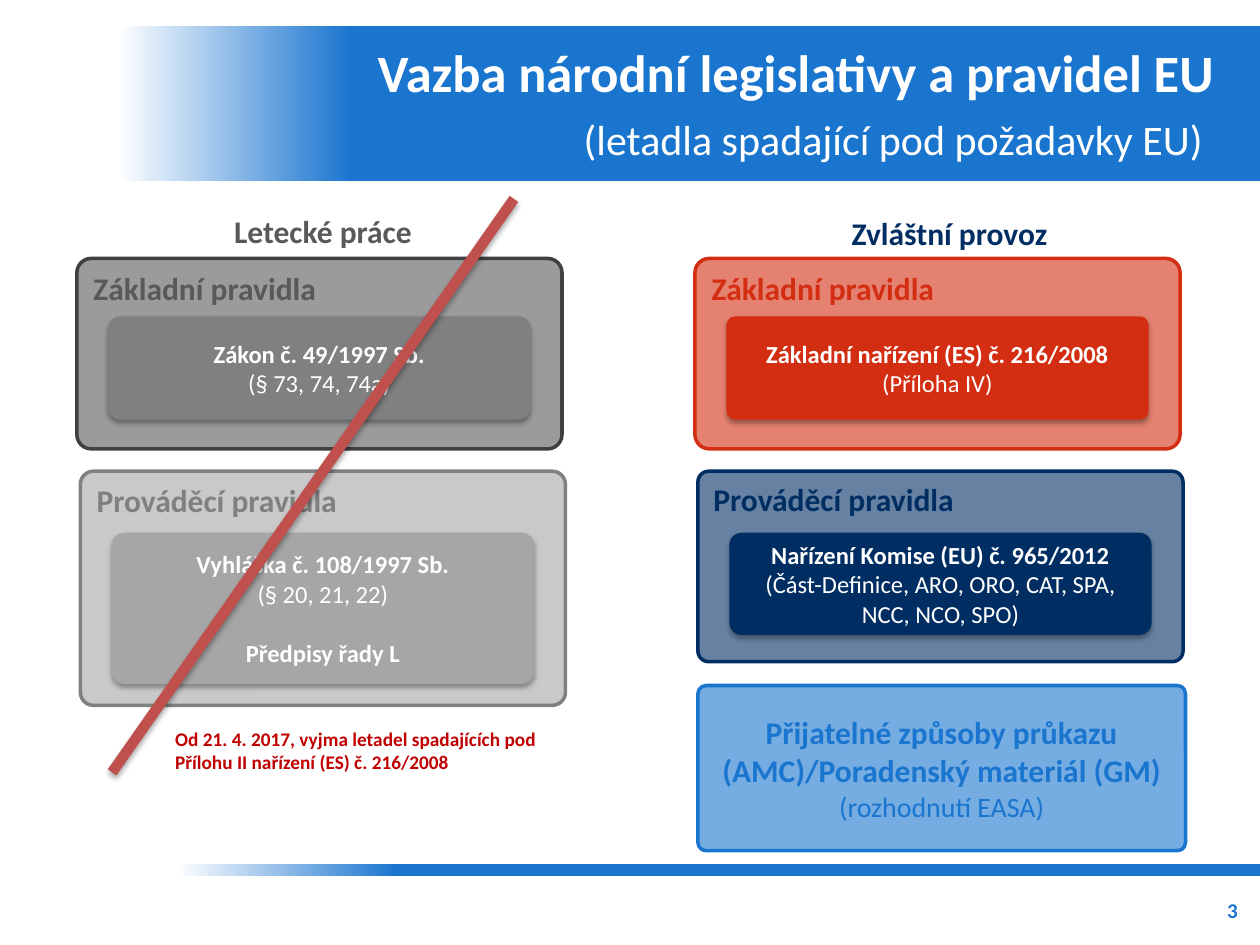
"""Build the slide comparing national aviation law with the EU rules."""
from dataclasses import dataclass
from typing import Optional

from lxml.etree import SubElement
from pptx import Presentation
from pptx.dml.color import RGBColor
from pptx.enum.shapes import MSO_CONNECTOR as Connector, MSO_SHAPE as Shape
from pptx.enum.text import MSO_ANCHOR as Anchor, MSO_AUTO_SIZE as AutoSize, PP_ALIGN as Align
from pptx.oxml.ns import qn
from pptx.util import Cm, Pt

WHITE = RGBColor(0xFF, 0xFF, 0xFF)
BLUE = RGBColor(0x1A, 0x75, 0xCF)
NAVY = RGBColor(0x00, 0x2E, 0x63)
RED = RGBColor(0xD4, 0x2E, 0x12)
NOTE_RED = RGBColor(0xC0, 0x00, 0x00)
STRIKE_RED = RGBColor(0xC0, 0x50, 0x4D)
CHARCOAL = RGBColor(0x40, 0x40, 0x40)
DARK_GRAY = RGBColor(0x59, 0x59, 0x59)
GRAY = RGBColor(0x80, 0x80, 0x80)
LIGHT_GRAY = RGBColor(0xA6, 0xA6, 0xA6)
FONT = "Calibri"
CARD_WIDTH = 8.51


@dataclass(frozen=True)
class Box:
    left: float
    top: float
    width: float
    height: float

    def lengths(self) -> tuple:
        return Cm(self.left), Cm(self.top), Cm(self.width), Cm(self.height)


@dataclass(frozen=True)
class Line:
    text: str
    size: float
    bold: bool = True
    space_before: float = 0


@dataclass(frozen=True)
class Panel:
    box: Box
    fill: RGBColor
    border: RGBColor
    text_color: RGBColor
    lines: tuple
    radius: float
    card: Optional["Card"] = None


@dataclass(frozen=True)
class Card:
    top: float
    height: float
    fill: RGBColor
    lines: tuple
    radius: float


@dataclass(frozen=True)
class Label:
    box: Box
    line: Line
    color: RGBColor
    wrap: bool = False
    align: Align = Align.LEFT
    anchor: Anchor = Anchor.TOP


PANELS = (
    Panel(Box(1.55, 5.21, 9.78, 3.84), DARK_GRAY, CHARCOAL, DARK_GRAY,
          (Line("Základní pravidla", 18),), 0.075,
          Card(6.38, 2.08, GRAY,
               (Line("Zákon č. 49/1997 Sb.", 14), Line("(§ 73, 74, 74a)", 14, False)), 0.118)),
    Panel(Box(1.62, 9.5, 9.78, 4.72), LIGHT_GRAY, GRAY, GRAY,
          (Line("Prováděcí pravidla", 18),), 0.056,
          Card(10.74, 3.05, LIGHT_GRAY,
               (Line("Vyhláška č. 108/1997 Sb.", 14), Line("(§ 20, 21, 22)", 14, False),
                Line("Předpisy řady L", 14, space_before=17)), 0.083)),
    Panel(Box(14.01, 5.21, 9.78, 3.84), RED, RED, RED,
          (Line("Základní pravidla", 18),), 0.075,
          Card(6.38, 2.08, RED,
               (Line("Základní nařízení (ES) č. 216/2008", 14),
                Line("(Příloha IV)", 14, False)), 0.081)),
    Panel(Box(14.07, 9.5, 9.78, 3.84), NAVY, NAVY, NAVY,
          (Line("Prováděcí pravidla", 18),), 0.056,
          Card(10.74, 2.06, NAVY,
               (Line("Nařízení Komise (EU) č. 965/2012", 14),
                Line("(Část-Definice, ARO, ORO, CAT, SPA, NCC, NCO, SPO)", 14, False)), 0.117)),
    Panel(Box(14.07, 13.82, 9.83, 3.33), BLUE, BLUE, BLUE,
          (Line("Přijatelné způsoby průkazu (AMC)/Poradenský materiál (GM)", 18),
           Line("(rozhodnutí EASA)", 16, False)), 0.049),
)
HEADINGS = (
    Label(Box(4.47, 4.14, 4.09, 1.02), Line("Letecké práce", 18), DARK_GRAY),
    Label(Box(16.92, 4.18, 4.5, 1.02), Line("Zvláštní provoz", 18), NAVY),
)
NOTE = Label(Box(3.28, 14.53, 7.95, 1.19),
             Line("Od 21. 4. 2017, vyjma letadel spadajících pod Přílohu II nařízení (ES) č. 216/2008", 11),
             NOTE_RED, True)
PAGE_NUMBER = Label(Box(19.28, 17.83, 5.92, 1.02), Line("3", 12), BLUE, True,
                    Align.RIGHT, Anchor.MIDDLE)
BANDS = (Box(1.91, 0.53, 23.49, 3.12), Box(3.1, 17.42, 22.3, 0.25))


def format_run(run, size: float, bold: bool, color: RGBColor) -> None:
    font = run.font
    font.name, font.size, font.bold = FONT, Pt(size), bold
    font.color.rgb = color


def write_lines(text_frame, lines: tuple, color: RGBColor, align: Align, anchor: Anchor) -> None:
    text_frame.word_wrap = True
    text_frame.vertical_anchor = anchor
    text_frame.text = "\n".join(line.text for line in lines)
    for paragraph, line in zip(text_frame.paragraphs, lines):
        paragraph.alignment = align
        if line.space_before:
            paragraph.space_before = Pt(line.space_before)
        format_run(paragraph.runs[0], line.size, line.bold, color)


def set_shadow(shape, visible: bool) -> None:
    properties = shape.element.spPr
    for effects in properties.findall(qn("a:effectLst")):
        properties.remove(effects)
    effects = SubElement(properties, qn("a:effectLst"))
    if visible:
        shadow = SubElement(effects, qn("a:outerShdw"), blurRad=str(Pt(3.1)), dist=str(Pt(1.8)),
                            dir="5400000", rotWithShape="0")
        color = SubElement(shadow, qn("a:srgbClr"), val="000000")
        SubElement(color, qn("a:alpha"), val="35000")


def add_band(slide, box: Box) -> None:
    band = slide.shapes.add_shape(Shape.RECTANGLE, *box.lengths())
    band.shadow.inherit = False
    band.line.fill.background()
    band.fill.gradient()
    band.fill.gradient_angle = 0
    for stop, position, color in zip(band.fill.gradient_stops, (0.02, 0.22), (WHITE, BLUE)):
        stop.position = position
        stop.color.rgb = color


def add_rounded(slide, box: Box, fill: RGBColor, radius: float):
    shape = slide.shapes.add_shape(Shape.ROUNDED_RECTANGLE, *box.lengths())
    shape.adjustments[0] = radius
    shape.fill.solid()
    shape.fill.fore_color.rgb = fill
    return shape


def add_panel(slide, panel: Panel) -> None:
    shape = add_rounded(slide, panel.box, panel.fill, panel.radius)
    color = shape.element.spPr.find(qn("a:solidFill")).find(qn("a:srgbClr"))
    SubElement(color, qn("a:alpha"), val="60000")
    shape.line.color.rgb = panel.border
    shape.line.width = Pt(2)
    set_shadow(shape, False)
    card = panel.card
    align, anchor = (Align.LEFT, Anchor.TOP) if card else (Align.CENTER, Anchor.MIDDLE)
    write_lines(shape.text_frame, panel.lines, panel.text_color, align, anchor)
    if card:
        left = panel.box.left + (panel.box.width - CARD_WIDTH) / 2
        inner = add_rounded(slide, Box(left, card.top, CARD_WIDTH, card.height),
                            card.fill, card.radius)
        inner.line.fill.background()
        set_shadow(inner, True)
        write_lines(inner.text_frame, card.lines, WHITE, Align.CENTER, Anchor.MIDDLE)


def add_label(slide, label: Label) -> None:
    text_frame = slide.shapes.add_textbox(*label.box.lengths()).text_frame
    write_lines(text_frame, (label.line,), label.color, label.align, label.anchor)
    text_frame.word_wrap = label.wrap


def place_title(slide) -> None:
    title = slide.shapes.title
    title.left, title.top, title.width, title.height = Box(1.91, 0.48, 22.83, 3.18).lengths()
    slide.shapes.element.append(title.element)
    text_frame = title.text_frame
    text_frame.auto_size = AutoSize.NONE
    text_frame.vertical_anchor = Anchor.MIDDLE
    paragraph = text_frame.paragraphs[0]
    paragraph.text = "Vazba národní legislativy a pravidel EU\v(letadla spadající pod požadavky EU)"
    paragraph.alignment = Align.RIGHT
    paragraph.add_run().text = " "
    for run, size, bold in zip(paragraph.runs, (30, 24, 30), (True, False, True)):
        format_run(run, size, bold, WHITE)


def add_strike(slide) -> None:
    strike = slide.shapes.add_connector(Connector.STRAIGHT, Cm(10.36), Cm(4.01), Cm(2.26), Cm(15.57))
    strike.line.color.rgb = STRIKE_RED
    strike.line.width = Pt(6)
    set_shadow(strike, True)


def main() -> None:
    presentation = Presentation()
    presentation.slide_width, presentation.slide_height = Cm(25.4), Cm(19.05)
    slide = presentation.slides.add_slide(presentation.slide_layouts[5])
    for band in BANDS:
        add_band(slide, band)
    place_title(slide)
    add_label(slide, PAGE_NUMBER)
    for panel in PANELS:
        add_panel(slide, panel)
    for heading in HEADINGS:
        add_label(slide, heading)
    add_strike(slide)
    add_label(slide, NOTE)
    presentation.save("out.pptx")


if __name__ == "__main__":
    main()
